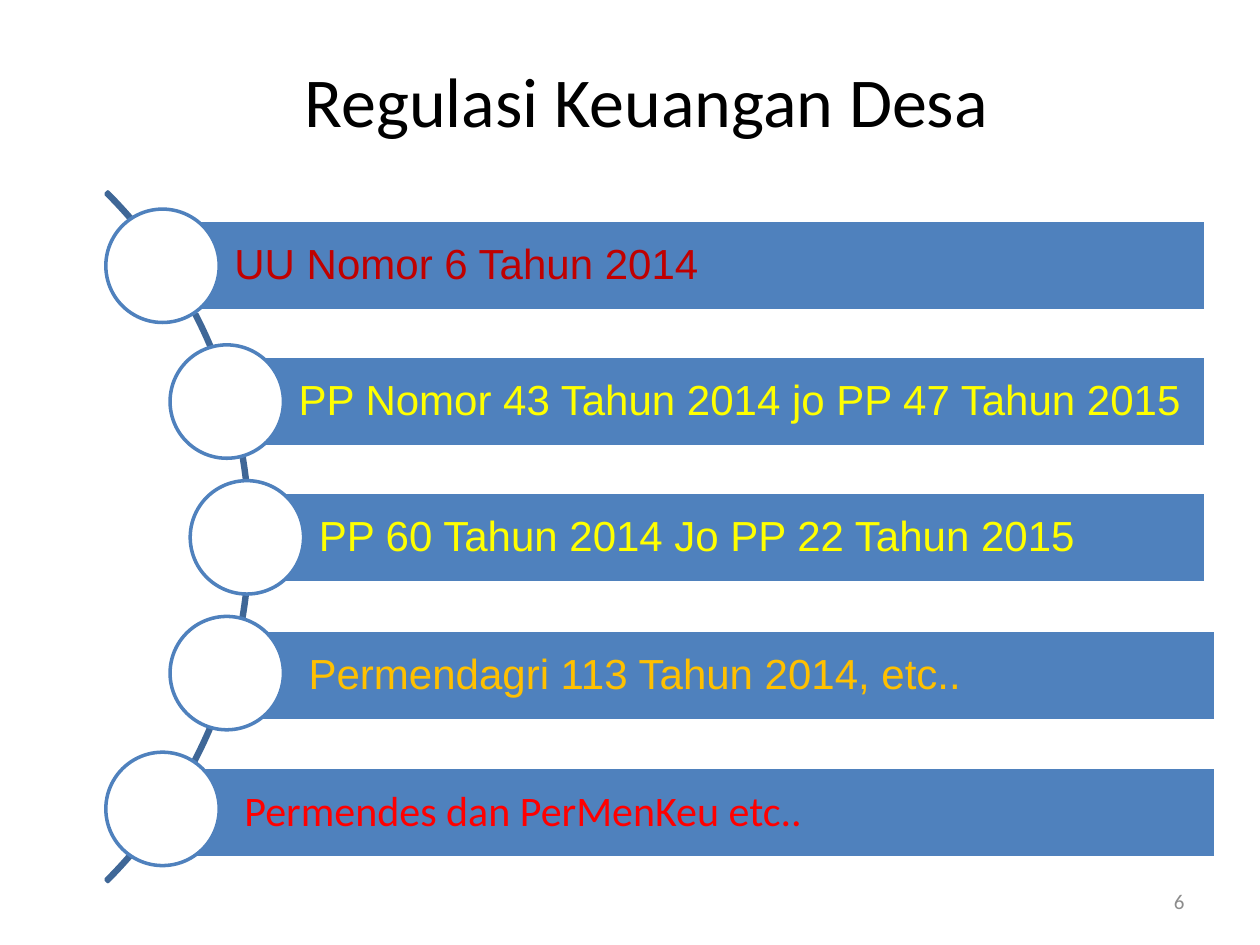
from pptx import Presentation
from pptx.dml.color import RGBColor
from pptx.enum.shapes import MSO_SHAPE
from pptx.enum.text import MSO_ANCHOR, PP_ALIGN
from pptx.util import Inches, Pt

COLORS = {
    "black": "000000", "white": "FFFFFF", "gray": "8C8C8C",
    "blue": "4F81BD", "arc": "3F6797", "dark_red": "C00000",
    "yellow": "FFFF00", "orange": "FFC000", "red": "FF0000",
}
REGULATIONS = [
    ("UU Nomor 6 Tahun 2014", "Arial", "dark_red", 0, 0, 0),
    ("PP Nomor 43 Tahun 2014 jo PP 47 Tahun 2015", "Arial", "yellow", 0.51, 0, 0),
    ("PP 60 Tahun 2014 Jo PP 22 Tahun 2015", "Arial", "yellow", 0.67, 0, 0),
    ("Permendagri 113 Tahun 2014, etc..", "Arial", "orange", 0.51, 0.08, 0.02),
    ("Permendes dan PerMenKeu etc..", "Calibri", "red", 0, 0.08, 0.03),
]
DIAMETER = 0.9
BAR_HEIGHT = 0.72


def color(name):
    return RGBColor.from_string(COLORS[name])


def write(sp, text, size, font, fill, align):
    tf = sp.text_frame
    tf.word_wrap = True
    tf.vertical_anchor = MSO_ANCHOR.MIDDLE
    tf.text = text
    p = tf.paragraphs[0]
    p.alignment = align
    f = p.runs[0].font
    f.size, f.name, f.color.rgb = Pt(size), font, color(fill)
    return tf


def add_label(s, box, text, size, fill, align):
    sp = s.shapes.add_textbox(*map(Inches, box))
    write(sp, text, size, "Calibri", fill, align)


def add_outlined(s, kind, box, fill, line):
    sp = s.shapes.add_shape(kind, *map(Inches, box))
    sp.shadow.inherit = False
    if fill:
        sp.fill.solid()
        sp.fill.fore_color.rgb = color(fill)
    else:
        sp.fill.background()
    sp.line.color.rgb = color(line)
    sp.line.width = Pt(2)
    return sp


def add_arc(s, box):
    sp = add_outlined(s, MSO_SHAPE.BLOCK_ARC, box, None, "arc")
    for i, value in enumerate((189, 27, 0.003)):
        sp.adjustments[i] = value


def add_bar(s, box, text, font, fill):
    sp = add_outlined(s, MSO_SHAPE.RECTANGLE, box, "blue", "white")
    tf = write(sp, text, 24, font, fill, PP_ALIGN.LEFT)
    tf.margin_left = Inches(0.57)
    tf.margin_top = tf.margin_right = tf.margin_bottom = Inches(0.07)
    tf.paragraphs[0].line_spacing = 0.9


def add_regulations(s, box):
    left, top, width, height = box
    pitch = (height - DIAMETER) / (len(REGULATIONS) - 1)
    for i, (text, font, fill, indent, dx, dy) in enumerate(REGULATIONS):
        x, y = left + indent, top + i * pitch
        bar_left = x + DIAMETER / 2
        bar_top = y + (DIAMETER - BAR_HEIGHT) / 2
        bar = (bar_left + dx, bar_top + dy, left + width - bar_left, BAR_HEIGHT)
        add_bar(s, bar, text, font, fill)
        add_outlined(s, MSO_SHAPE.OVAL, (x, y, DIAMETER, DIAMETER), "white", "blue")


def main():
    prs = Presentation()
    prs.slide_width, prs.slide_height = Inches(10), Inches(7.5)
    s = prs.slides.add_slide(prs.slide_layouts[6])
    add_label(s, (0.67, 0.25, 8.92, 1.08), "Regulasi Keuangan Desa", 40,
              "black", PP_ALIGN.CENTER)
    add_label(s, (7.17, 6.95, 2.33, 0.4), "6", 12, "gray", PP_ALIGN.RIGHT)
    add_arc(s, (-5.75, 0.39, 7.74, 7.74))
    add_regulations(s, (0.84, 1.66, 8.73, 5.21))
    prs.save("out.pptx")


if __name__ == "__main__":
    main()
